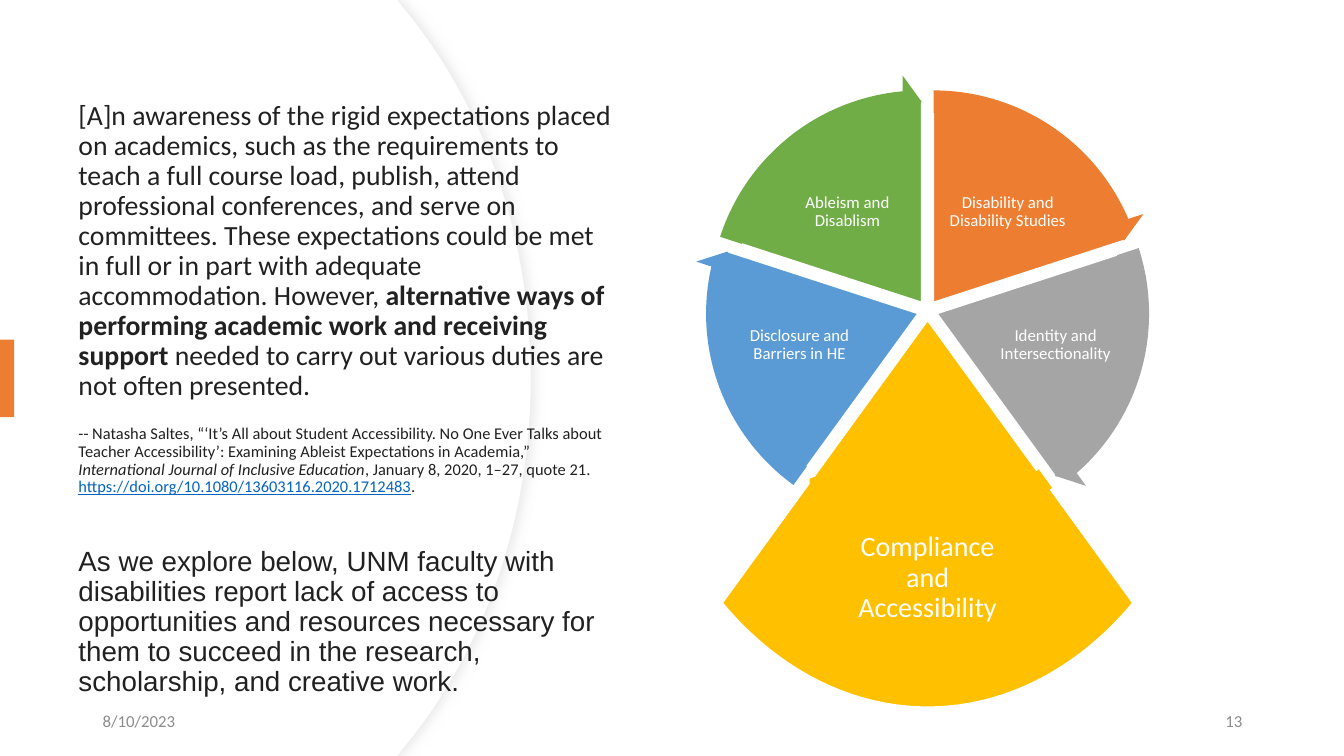
import math

import pptx
import pptx.dml.color
import pptx.enum.shapes
import pptx.enum.text
import pptx.oxml
import pptx.oxml.ns
import pptx.util

Inches = pptx.util.Inches
Shape = pptx.enum.shapes.MSO_SHAPE
Align = pptx.enum.text.PP_ALIGN
Anchor = pptx.enum.text.MSO_ANCHOR


class Theme:
    white, ink, link, grey = "FFFFFF", "212121", "0563C1", "8C8C8C"
    edge, shade = "EFEFEF", "D9D9D9"
    orange, silver, gold = "ED7D31", "A5A5A5", "FFC000"
    blue, green = "5B9BD5", "70AD47"
    font, sans = "Calibri", "Arial"
    body, cite, small, large = 19.8, 11.7, 12, 20


class Page:
    def __init__(self, slide, theme):
        self.shapes = slide.shapes
        self.theme = theme

    def color(self, code):
        return pptx.dml.color.RGBColor.from_string(code)

    def paint(self, shape, fill, line=None, width=1):
        shape.shadow.inherit = False
        shape.fill.solid()
        shape.fill.fore_color.rgb = self.color(fill)
        if line:
            shape.line.color.rgb = self.color(line)
            shape.line.width = pptx.util.Pt(width)
        else:
            shape.line.fill.background()
        return shape

    def preset(self, kind, box, fill, line=None, adjust=()):
        shape = self.shapes.add_shape(kind, *map(Inches, box))
        for i, value in enumerate(adjust):
            shape.adjustments[i] = value
        return self.paint(shape, fill, line)

    def outline(self, points, fill, line=None, width=1):
        dots = [(Inches(x), Inches(y)) for x, y in points]
        pen = self.shapes.build_freeform(*dots[0], scale=1.0)
        pen.add_line_segments(dots[1:], close=True)
        return self.paint(pen.convert_to_shape(), fill, line, width)

    def soften(self, shape, code):
        """Give a shape a soft shadow to its right."""
        effects = shape._element.spPr.find(pptx.oxml.ns.qn("a:effectLst"))
        effects.append(pptx.oxml.parse_xml(
            f'<a:outerShdw {pptx.oxml.ns.nsdecls("a")} blurRad="{Inches(0.1)}" '
            f'dist="{Inches(0.04)}" dir="0"><a:srgbClr val="{code}">'
            '<a:alpha val="50000"/></a:srgbClr></a:outerShdw>'))

    def frame(self, box, pad=None, anchor=Anchor.MIDDLE):
        frame = self.shapes.add_textbox(*map(Inches, box)).text_frame
        frame.word_wrap = True
        frame.vertical_anchor = anchor
        if pad is not None:
            frame.margin_left = frame.margin_right = Inches(pad)
            frame.margin_top = frame.margin_bottom = Inches(pad)
        return frame

    def style(self, run, size, code, font=None, **flags):
        run.font.size = pptx.util.Pt(size)
        run.font.name = font or self.theme.font
        run.font.color.rgb = self.color(code)
        for name, value in flags.items():
            setattr(run.font, name, value)

    def label(self, box, text, size, code, align, pad=None, space=1.0):
        line = self.frame(box, pad).paragraphs[0]
        line.text = text
        line.alignment = align
        line.line_spacing = space
        self.style(line.runs[0], size, code)

    def prose(self, box, blocks):
        """Each block is (space before, size, font, [(text, flags)])."""
        frame = self.frame(box, anchor=Anchor.TOP)
        for i, (gap, size, font, parts) in enumerate(blocks):
            para = frame.add_paragraph() if i else frame.paragraphs[0]
            para.line_spacing = 0.9
            para.space_before = pptx.util.Pt(gap)
            for text, flags in parts:
                run = para.add_run()
                run.text = text
                code = self.theme.link if "underline" in flags else self.theme.ink
                self.style(run, size, code, font, **flags)


def curve(start, pull, push, end, steps=24):
    """Points along a cubic curve."""
    for i in range(steps + 1):
        t = i / steps
        u = 1 - t
        yield tuple(u**3 * a + 3 * u*u*t * b + 3 * u*t*t * c + t**3 * d
                    for a, b, c, d in zip(start, pull, push, end))


def panel(right):
    """Left panel with a bulging right edge, mirrored about mid height."""
    upper = list(curve((right - 1.26, 0.08), (right - 0.48, 1.02),
                       (right, 2.32), (right, 3.75)))
    half = [(0, 0), (3.94, 0)] + upper
    return half + [(x, 7.5 - y) for x, y in reversed(half[:-1])]


def spot(mid, gap):
    """Centre of a slice, moved outward along its middle angle."""
    turn = math.radians(mid)
    return 9.2 + gap * math.cos(turn), 3.08 + gap * math.sin(turn)


def around(centre, wide, high):
    return centre[0] - wide / 2, centre[1] - high / 2, wide, high


def main():
    deck = pptx.Presentation()
    deck.slide_width, deck.slide_height = Inches(13.33), Inches(7.5)
    theme = Theme()
    page = Page(deck.slides.add_slide(deck.slide_layouts[6]), theme)

    # Curved backdrop
    back = page.outline(panel(5.27), theme.white, theme.edge, 0.75)
    page.soften(back, theme.shade)
    page.outline(panel(5.26), theme.white)

    # Quote, source and comment
    page.prose((0.68, 0.96, 5.52, 5.93), [
        (0, theme.body, theme.font, [
            ("[A]n awareness of the rigid expectations placed on academics, "
             "such as the requirements to teach a full course load, publish, "
             "attend professional conferences, and serve on committees. These "
             "expectations could be met in full or in part with adequate "
             "accommodation. However, ", {}),
            ("alternative ways of performing academic work and receiving "
             "support ", {"bold": True}),
            ("needed to carry out various duties are not often presented.", {})]),
        (17.3, theme.cite, theme.font, [
            ("-- Natasha Saltes, “‘It’s All about Student Accessibility. No One "
             "Ever Talks about Teacher Accessibility’: Examining Ableist "
             "Expectations in Academia,” ", {}),
            ("International Journal of Inclusive Education", {"italic": True}),
            (", January 8, 2020, 1–27, quote 21. ", {}),
            ("https://doi.org/10.1080/13603116.2020.1712483",
             {"underline": True}),
            (".", {})]),
        (36.5, theme.body, theme.sans, [
            ("As we explore below, UNM faculty with disabilities report lack of "
             "access to opportunities and resources necessary for them to "
             "succeed in the research, scholarship, and creative work.", {})])])

    # Accent tab
    page.preset(Shape.RECTANGLE, (0, 3.37, 0.14, 0.77), theme.orange)

    # Wheel slices: text, fill, pie size, label box, text size, arrow gap
    disc = (4.03, 4.03)
    slices = [
        ("Disability and Disability Studies", theme.orange, disc,
         (9.35, 1.67, 1.29, 0.86), theme.small, 0.1),
        ("Identity and Intersectionality", theme.silver, disc,
         (9.87, 2.94, 1.2, 0.96), theme.small, 0.1),
        ("Compliance and Accessibility", theme.gold, (5.96, 7.67),
         (8.35, 4.73, 1.7, 2.01), theme.large, 0.06),
        ("Disclosure and Barriers in HE", theme.blue, disc,
         (7.33, 2.94, 1.2, 0.96), theme.small, 0.1),
        ("Ableism and Disablism", theme.green, disc,
         (7.76, 1.67, 1.29, 0.86), theme.small, 0.1)]
    sweep = 360 / len(slices)
    unit = 0.6  # adjustment value per degree
    head = 3.28
    arrows = []
    for i, (text, fill, size, box, points, gap) in enumerate(slices):
        start = 270 + i * sweep
        mid = start + sweep / 2
        first, last = start % 360 * unit, (start + sweep) % 360 * unit
        page.preset(Shape.PIE, around(spot(mid, 0.1), *size), fill,
                    theme.white, (first, last))
        page.label(box, text, points, theme.white, Align.CENTER, 0.02, 0.9)
        arrows.append((around(spot(mid, gap), 4.52, 4.52), fill,
                       (0.05, head, last - head, first, 0.06)))

    # Arrows along the rim
    for box, fill, adjust in arrows:
        page.preset(Shape.CIRCULAR_ARROW, box, fill, adjust=adjust)

    # Footer
    for left, text, align in ((9.42, "13", Align.RIGHT),
                              (0.92, "8/10/2023", Align.LEFT)):
        page.label((left, 6.95, 3, 0.4), text, theme.small, theme.grey, align)

    deck.save("out.pptx")


if __name__ == "__main__":
    main()
